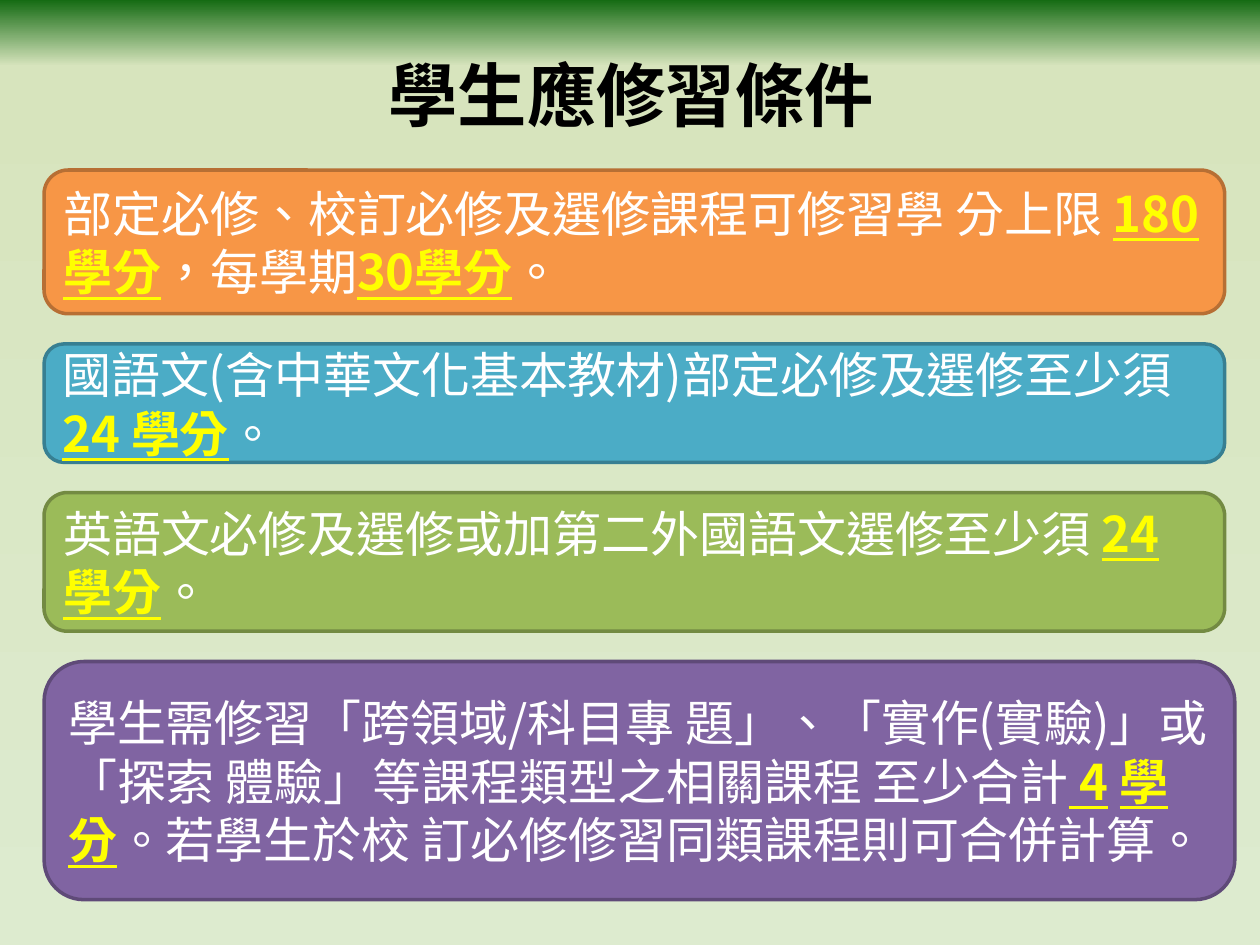
from copy import deepcopy
from dataclasses import dataclass

from lxml.etree import SubElement
from pptx import Presentation
from pptx.dml.color import RGBColor as Rgb
from pptx.enum.shapes import MSO_SHAPE as Shape
from pptx.enum.text import MSO_ANCHOR as Anchor, PP_ALIGN as Align
from pptx.oxml.ns import qn
from pptx.util import Inches, Pt


@dataclass(frozen=True)
class Theme:
    font: str = "Noto Sans CJK SC"
    head: float = 39.6
    body: float = 28
    edge: float = 2
    dark: str = "000000"
    light: str = "FFFFFF"
    mark: str = "FFFF00"
    back: tuple = ((0, "DDEBCF"), (0.93, "D7E4BD"), (1, "156B13"))


class Deck:
    """Style and current slide; lengths are cells of a 100 by 75 grid."""

    def __init__(self, theme):
        self.theme = theme
        self.prs = Presentation()
        self.prs.slide_width, self.prs.slide_height = Inches(10), Inches(7.5)
        self.cell = self.prs.slide_width / 100
        self.slide = self.prs.slides.add_slide(self.prs.slide_layouts[6])

    def grid(self, *cells):
        return [round(n * self.cell) for n in cells]

    def backdrop(self):
        fill = self.slide.background.fill
        fill.gradient()
        fill.gradient_angle = 90
        stops = self.slide.element.find(".//" + qn("a:gsLst"))
        stops.insert(1, deepcopy(stops[0]))
        for stop, (pos, tone) in zip(fill.gradient_stops, self.theme.back):
            stop.position = pos
            stop.color.rgb = Rgb.from_string(tone)

    def style(self, run, size, color, bold=False, under=False):
        font = run.font
        font.name, font.size = self.theme.font, Pt(size)
        font.bold, font.underline = bold, under
        font.color.rgb = Rgb.from_string(color)
        props = run._r.get_or_add_rPr()
        props.set("lang", "zh-TW")
        SubElement(props, qn("a:ea"), typeface=self.theme.font)

    def title(self, text, *cells):
        frame = self.slide.shapes.add_textbox(*self.grid(*cells)).text_frame
        frame.word_wrap = True
        frame.vertical_anchor = Anchor.MIDDLE
        para = frame.paragraphs[0]
        para.text = text
        para.alignment = Align.CENTER
        self.style(para.runs[0], self.theme.head, self.theme.dark, bold=True)

    def card(self, text, fill, line, *cells):
        """Rounded box; text between asterisks is highlighted."""
        box = self.slide.shapes.add_shape(
            Shape.ROUNDED_RECTANGLE, *self.grid(*cells))
        box.shadow.inherit = False
        box.fill.solid()
        box.fill.fore_color.rgb = Rgb.from_string(fill)
        box.line.color.rgb = Rgb.from_string(line)
        box.line.width = Pt(self.theme.edge)
        frame = box.text_frame
        frame.word_wrap = True
        frame.vertical_anchor = Anchor.MIDDLE
        para = frame.paragraphs[0]
        para.alignment = Align.LEFT
        for i, part in enumerate(text.split("*")):
            run = para.add_run()
            run.text = part
            hot = i % 2 == 1
            color = self.theme.mark if hot else self.theme.light
            self.style(run, self.theme.body, color, hot, hot)


RULES = (
    ("部定必修、校訂必修及選修課程可修習學 分上限 *180 學分*，每學期*30學分*。",
     "F79646", "B76F34", 93.7, 11.4),
    ("國語文(含中華文化基本教材)部定必修及選修至少須 *24 學分*。",
     "4BACC6", "377F92", 93.7, 9.4),
    ("英語文必修及選修或加第二外國語文選修至少須 *24 學分*。",
     "9BBB59", "738A42", 93.7, 11),
    ("學生需修習「跨領域/科目專 題」、「實作(實驗)」或「探索 體驗」等課程類型之相關課程 "
     "至少合計* 4* *學分*。若學生於校 訂必修修習同類課程則可合併計算。",
     "8064A2", "5F4A78", 94.5, 18.9),
)
LEFT, TOP, GAP = 3.5, 13.5, 2.4


def main():
    deck = Deck(Theme())
    deck.backdrop()
    deck.title("學生應修習條件", 5.1, 3.6, 90, 7.7)
    top = TOP
    for text, fill, line, width, height in RULES:
        deck.card(text, fill, line, LEFT, top, width, height)
        top += height + GAP
    deck.prs.save("out.pptx")


if __name__ == "__main__":
    main()
